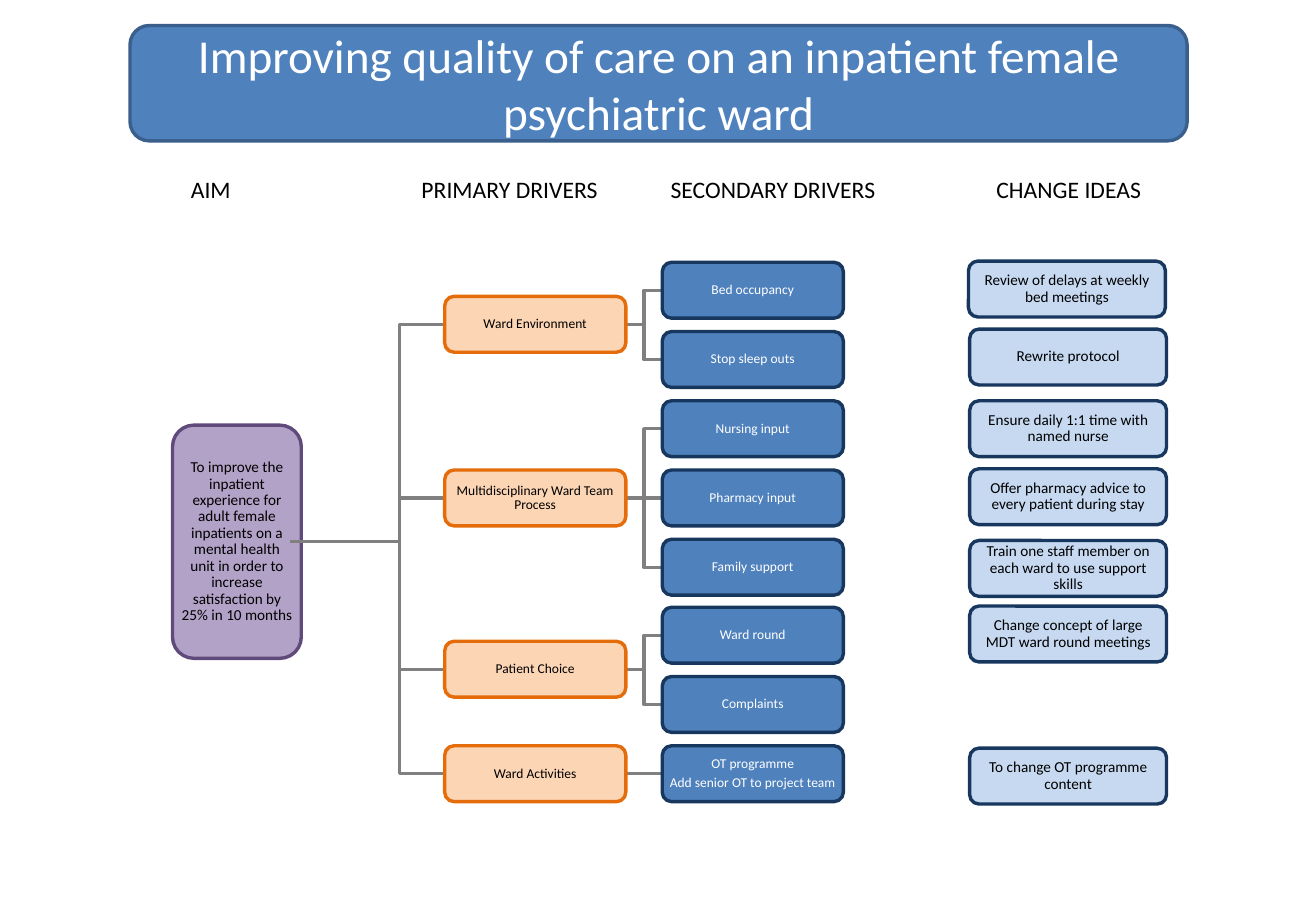
"""Draw a driver diagram for a ward improvement project."""
from dataclasses import dataclass

from pptx import Presentation, util as u
from pptx.dml.color import RGBColor
from pptx.enum import shapes as sh, text as tx
from pptx.oxml.ns import qn
from lxml import etree

PX = 9144
BOX_H = 46
FIRST, STEP = 216, 56.9
PRIME_X, NEXT_X, DRIVE_W = 366, 545, 149
AIM_MID = 446
GREY = "808080"
CENTER, LEFT = tx.PP_ALIGN.CENTER, tx.PP_ALIGN.LEFT


@dataclass(frozen=True)
class Look:
    """Colours, text size and side inset of a kind of box."""
    fill: str
    line: str
    ink: str
    size: int
    side: int = 1


@dataclass(frozen=True)
class Driver:
    """A primary driver with the secondary drivers below it."""
    name: str
    needs: tuple[str, ...]


@dataclass(frozen=True)
class Idea:
    """A change idea and its place."""
    x: int
    y: int
    name: str


@dataclass(frozen=True)
class Head:
    """A column heading."""
    x: int
    w: int
    name: str
    align: tx.PP_ALIGN


AIM = Look("B3A2C7", "604A7B", "000000", 9)
PRIME = Look("FCD5B5", "E46C0A", "000000", 8)
NEXT = Look("4F81BD", "17375E", "FFFFFF", 8)
IDEA = Look("C6D9F1", "17375E", "000000", 9, 10)
TITLE = Look("4F81BD", "3A5F8C", "FFFFFF", 28)

GOAL = ("To improve the inpatient experience for adult female inpatients on a mental "
        "health unit in order to increase satisfaction by 25% in 10 months")
DRIVERS = (
    Driver("Ward Environment", ("Bed occupancy", "Stop sleep outs")),
    Driver("Multidisciplinary Ward Team Process",
           ("Nursing input", "Pharmacy input", "Family support")),
    Driver("Patient Choice", ("Ward round", "Complaints")),
    Driver("Ward Activities", ("OT programme\nAdd senior OT to project team",)),
)
IDEAS = (
    Idea(797, 215, "Review of delays at weekly bed meetings"),
    Idea(798, 271, "Rewrite protocol"),
    Idea(798, 330, "Ensure daily 1:1 time with named nurse"),
    Idea(798, 386, "Offer pharmacy advice to every patient during stay"),
    Idea(798, 445, "Train one staff member on each ward to use support skills"),
    Idea(798, 499, "Change concept of large MDT ward round meetings"),
    Idea(798, 616, "To change OT programme content"),
)
HEADS = (
    Head(114, 119, "AIM", CENTER),
    Head(337, 205, "PRIMARY DRIVERS", LEFT),
    Head(542, 205, "SECONDARY DRIVERS", LEFT),
    Head(777, 205, "CHANGE IDEAS", CENTER),
)


def emu(*px: int) -> list[u.Emu]:
    """Turn px into EMU."""
    return [u.Emu(p * PX) for p in px]


def tint(code: str) -> RGBColor:
    """Turn a hex string into a colour."""
    return RGBColor.from_string(code)


def write(shape, words: str, *, size: int, ink: str = "000000", align=CENTER,
          anchor=tx.MSO_ANCHOR.MIDDLE, side: int = 1, edge: int = 1,
          tight: bool = True) -> None:
    """Fill a shape with formatted text, one paragraph a line."""
    frame = shape.text_frame
    frame.word_wrap = True
    frame.vertical_anchor = anchor
    frame.margin_left = frame.margin_right = u.Emu(side * PX)
    frame.margin_top = frame.margin_bottom = u.Emu(edge * PX)
    frame.text = words
    for para in frame.paragraphs:
        para.alignment = align
        if tight:
            para.line_spacing = 0.9
            para.space_after = u.Pt(size * 0.35)
        font = para.runs[0].font
        font.name, font.size = "Calibri", u.Pt(size)
        font.color.rgb = tint(ink)


def box(slide, x: int, y: int, w: int, h: int, look: Look, words: str, **form) -> None:
    """Draw a rounded box with text."""
    shape = slide.shapes.add_shape(sh.MSO_SHAPE.ROUNDED_RECTANGLE, *emu(x, y, w, h))
    shape.shadow.inherit = False
    shape.fill.solid()
    shape.fill.fore_color.rgb = tint(look.fill)
    stroke(shape, look.line)
    write(shape, words, **{"size": look.size, "ink": look.ink, "side": look.side, **form})


def stroke(shape, code: str) -> None:
    """Give a shape its line."""
    shape.line.color.rgb = tint(code)
    shape.line.width = u.Pt(2)


def link(slide, x: int, y: int, to_x: int, to_y: int) -> None:
    """Join two points, with a bend halfway if their heights differ."""
    if y == to_y:
        line = slide.shapes.add_connector(sh.MSO_CONNECTOR.STRAIGHT, *emu(x, y, to_x, to_y))
        stroke(line, GREY)
        etree.SubElement(line._element.spPr, qn("a:effectLst"))
    else:
        mid = (x + to_x + 1) // 2
        pen = slide.shapes.build_freeform(x, y, scale=PX)
        pen.add_line_segments([(mid, y), (mid, to_y), (to_x, to_y)], close=False)
        line = pen.convert_to_shape()
        line.shadow.inherit = False
        line.fill.background()
        stroke(line, GREY)


def tree(slide) -> None:
    """Draw the drivers and the lines that join them."""
    row, half = 0, BOX_H // 2
    for driver in DRIVERS:
        tops = [round(FIRST + STEP * (row + i)) for i in range(len(driver.needs))]
        row += len(tops)
        top = (tops[0] + tops[-1]) // 2
        link(slide, 291, AIM_MID, PRIME_X, top + half)
        for y, need in zip(tops, driver.needs):
            link(slide, PRIME_X + DRIVE_W, top + half, NEXT_X, y + half)
            box(slide, NEXT_X, y, DRIVE_W, BOX_H, NEXT, need)
        box(slide, PRIME_X, top, DRIVE_W, BOX_H, PRIME, driver.name)


def main() -> None:
    """Build and save the slide."""
    deck = Presentation()
    deck.slide_width, deck.slide_height = emu(1083, 750)
    slide = deck.slides.add_slide(deck.slide_layouts[6])
    tree(slide)
    box(slide, 142, 350, 106, 192, AIM, GOAL)
    link(slide, 239, AIM_MID, 295, AIM_MID)
    for head in HEADS:
        label = slide.shapes.add_textbox(*emu(head.x, 139, head.w, 35))
        write(label, head.name, size=14, align=head.align, anchor=tx.MSO_ANCHOR.TOP,
              side=10, edge=5, tight=False)
    for idea in IDEAS:
        box(slide, idea.x, idea.y, 162, BOX_H, IDEA, idea.name)
    box(slide, 107, 21, 870, 95, TITLE,
        "Improving quality of care on an inpatient female psychiatric ward",
        side=10, edge=5, tight=False)
    deck.save("out.pptx")


if __name__ == "__main__":
    main()
